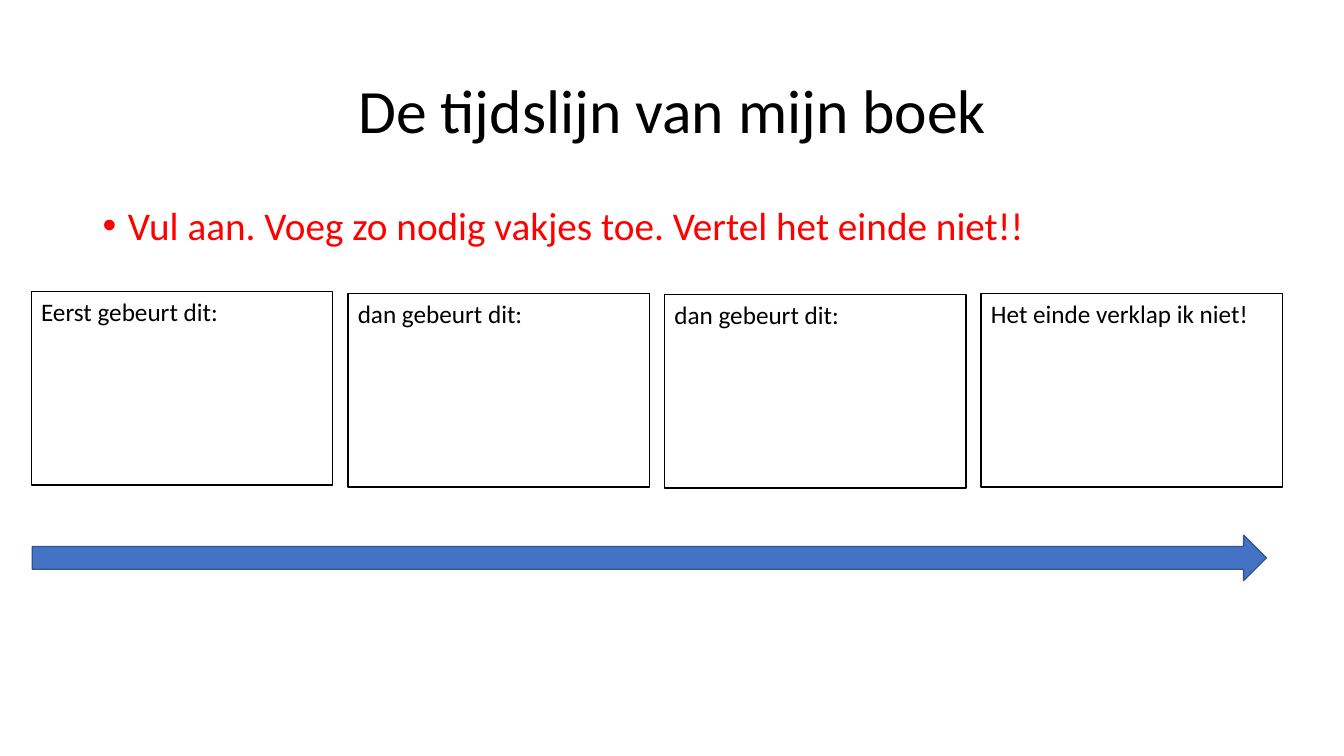
from dataclasses import dataclass

from lxml.etree import SubElement
from pptx import Presentation
from pptx.dml.color import RGBColor as Rgb
from pptx.enum.shapes import MSO_SHAPE as Kind
from pptx.enum.text import MSO_ANCHOR as Anchor
from pptx.enum.text import MSO_AUTO_SIZE as Fit
from pptx.enum.text import PP_ALIGN as Align
from pptx.oxml.ns import qn
from pptx.shapes.autoshape import Shape
from pptx.slide import Slide
from pptx.util import Emu, Pt

SCALE = 9144


@dataclass(frozen=True)
class Theme:
    font: str = "Calibri"
    ink: str = "000000"
    paper: str = "FFFFFF"
    hint: str = "FF0000"
    arrow: str = "4472C4"
    edge: str = "325491"
    head: int = 44
    body: int = 28
    note: int = 18


@dataclass(frozen=True)
class Step:
    text: str
    top: int


THEME = Theme()
STEPS = [
    Step("Eerst gebeurt dit:", 289),
    Step("dan gebeurt dit:", 291),
    Step("dan gebeurt dit:", 292),
    Step("Het einde verklap ik niet!", 291),
]
LEFT, PITCH, WIDTH, HEIGHT = 31, 314, 299, 192


def px(num: int) -> Emu:
    return Emu(num * SCALE)


def write(shape: Shape, text: str, *, size: int, color: str = THEME.ink,
          align: Align = Align.LEFT, anchor: Anchor = Anchor.TOP,
          space: float = 1.0, bullet: bool = False) -> None:
    frame = shape.text_frame
    frame.word_wrap = True
    frame.auto_size = Fit.NONE
    frame.vertical_anchor = anchor
    para = frame.paragraphs[0]
    para.alignment = align
    para.line_spacing = space
    run = para.add_run()
    run.text = text
    run.font.name = THEME.font
    run.font.size = Pt(size)
    run.font.color.rgb = Rgb.from_string(color)
    if bullet:
        props = para._p.get_or_add_pPr()
        props.set("marL", str(px(25)))
        props.set("indent", str(-px(25)))
        SubElement(props, qn("a:buFont")).set("typeface", "Arial")
        SubElement(props, qn("a:buChar")).set("char", "•")


def draw(slide: Slide, kind: Kind, left: int, top: int, width: int,
         height: int, *, fill: str, line: str) -> Shape:
    shape = slide.shapes.add_shape(kind, px(left), px(top), px(width), px(height))
    shape.shadow.inherit = False
    shape.fill.solid()
    shape.fill.fore_color.rgb = Rgb.from_string(fill)
    shape.line.color.rgb = Rgb.from_string(line)
    shape.line.width = Pt(1)
    return shape


def main() -> None:
    deck = Presentation()
    deck.slide_width, deck.slide_height = px(1333), px(750)
    slide = deck.slides.add_slide(deck.slide_layouts[5])

    title = slide.shapes.title
    title.left, title.top, title.width, title.height = px(92), px(40), px(1150), px(145)
    write(title, "De tijdslijn van mijn boek", size=THEME.head,
          align=Align.CENTER, anchor=Anchor.MIDDLE, space=0.9)

    hint = slide.shapes.add_textbox(px(92), px(200), px(1150), px(476))
    write(hint, "Vul aan. Voeg zo nodig vakjes toe. Vertel het einde niet!!",
          size=THEME.body, color=THEME.hint, space=0.9, bullet=True)

    draw(slide, Kind.RIGHT_ARROW, 32, 531, 1224, 45,
         fill=THEME.arrow, line=THEME.edge)
    for col, step in enumerate(STEPS):
        box = draw(slide, Kind.RECTANGLE, LEFT + col * PITCH, step.top,
                   WIDTH, HEIGHT, fill=THEME.paper, line=THEME.ink)
        write(box, step.text, size=THEME.note)

    deck.save("out.pptx")


if __name__ == "__main__":
    main()
